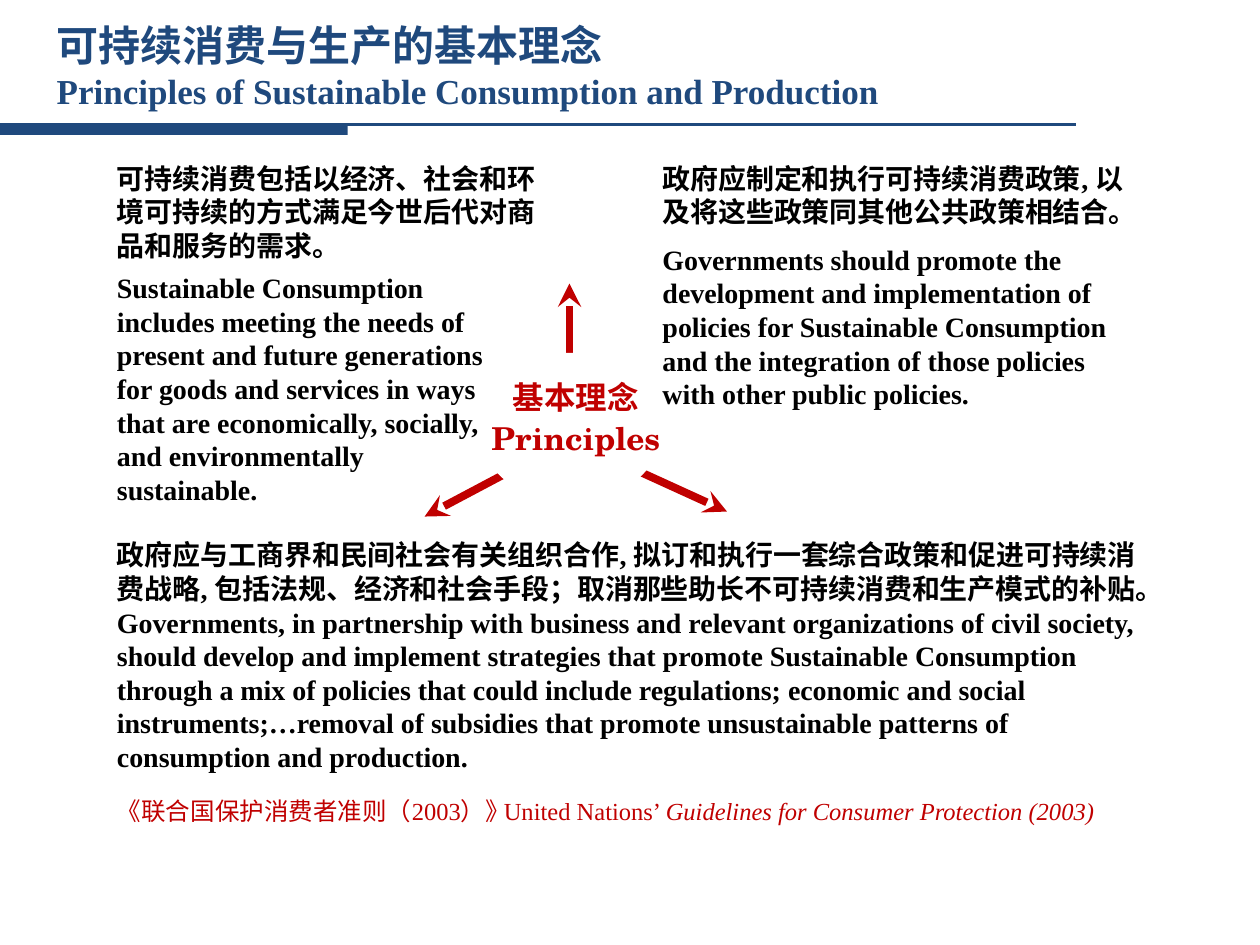
from dataclasses import dataclass

from lxml.etree import SubElement
from pptx import Presentation
from pptx.dml.color import RGBColor
from pptx.enum.shapes import MSO_CONNECTOR, MSO_SHAPE
from pptx.enum.text import MSO_ANCHOR, MSO_AUTO_SIZE, PP_ALIGN
from pptx.oxml.ns import qn
from pptx.util import Inches, Pt


@dataclass(frozen=True)
class Theme:
    navy: RGBColor = RGBColor(0x1F, 0x49, 0x7D)
    red: RGBColor = RGBColor(0xC0, 0x00, 0x00)
    black: RGBColor = RGBColor(0x00, 0x00, 0x00)
    white: RGBColor = RGBColor(0xFF, 0xFF, 0xFF)
    serif: str = "Times New Roman"
    schola: str = "TeX Gyre Schola"
    chinese: str = "Noto Sans CJK SC"
    title: int = 24
    subtitle: int = 20
    hub: int = 18
    body: int = 16
    source: int = 14


THEME = Theme()
LEFT = 0.83
HUB = (4.52, 3.49)
ARROW_TIPS = [(4.52, 2.25), (3.37, 4.1), (5.77, 4.06)]

CONSUMPTION_ZH = "可持续消费包括以经济、社会和环境可持续的方式满足今世后代对商品和服务的需求。"
CONSUMPTION_EN = (
    "Sustainable Consumption includes meeting the needs of present and future "
    "generations for goods and services in ways that are economically, socially, "
    "and environmentally sustainable."
)
POLICY_ZH = "政府应制定和执行可持续消费政策, 以及将这些政策同其他公共政策相结合。"
POLICY_EN = (
    "Governments should promote the development and implementation of policies "
    "for Sustainable Consumption and the integration of those policies with other "
    "public policies."
)
PARTNERSHIP_ZH = (
    "政府应与工商界和民间社会有关组织合作, 拟订和执行一套综合政策和促进可持续消费战略, "
    "包括法规、经济和社会手段；取消那些助长不可持续消费和生产模式的补贴。"
)
PARTNERSHIP_EN = (
    "Governments, in partnership with business and relevant organizations of civil "
    "society, should develop and implement strategies that promote Sustainable "
    "Consumption through a mix of policies that could include regulations; economic "
    "and social instruments;…removal of subsidies that promote unsustainable "
    "patterns of consumption and production."
)


def add_run(paragraph, text, size=THEME.body, color=THEME.black, font=THEME.serif,
            bold=True, italic=False):
    run = paragraph.add_run()
    run.text = text
    run.font.name = font
    run.font.size = Pt(size)
    run.font.color.rgb = color
    run.font.bold = bold
    run.font.italic = italic
    east_asian = SubElement(run.font._element, qn("a:ea"))
    east_asian.set("typeface", THEME.chinese)


def add_text_box(slide, box, lines, align=PP_ALIGN.LEFT, gap=0, **style):
    """Add a wrapped text box with one paragraph per line, gap points apart."""
    frame = slide.shapes.add_textbox(*map(Inches, box)).text_frame
    frame.word_wrap = True
    for index, line in enumerate(lines):
        paragraph = frame.paragraphs[0] if index == 0 else frame.add_paragraph()
        paragraph.alignment = align
        if index and gap:
            paragraph.space_before = Pt(gap)
        add_run(paragraph, line, **style)
    return frame


def add_line(slide, start, end, color, width, arrow=False):
    line = slide.shapes.add_connector(
        MSO_CONNECTOR.STRAIGHT, *map(Inches, (*start, *end)))
    line.line.color.rgb = color
    line.line.width = Pt(width)
    if arrow:
        SubElement(line.line._get_or_add_ln(), qn("a:tailEnd")).set("type", "stealth")
    SubElement(line._element.spPr, qn("a:effectLst"))


def add_solid(slide, kind, box, color):
    solid = slide.shapes.add_shape(kind, *map(Inches, box))
    solid.shadow.inherit = False
    solid.fill.solid()
    solid.fill.fore_color.rgb = color
    solid.line.fill.background()


def add_title(slide):
    title = slide.shapes.title
    title.left, title.top, title.width, title.height = map(
        Inches, (0.35, 0.21, 8.58, 0.62))
    frame = title.text_frame
    frame.auto_size = MSO_AUTO_SIZE.NONE
    frame.vertical_anchor = MSO_ANCHOR.MIDDLE
    chinese, english = frame.paragraphs[0], frame.add_paragraph()
    chinese.alignment = english.alignment = PP_ALIGN.LEFT
    add_run(chinese, "可持续消费与生产的基本理念", size=THEME.title,
            color=THEME.navy, font=THEME.chinese)
    add_run(english, "Principles of Sustainable Consumption and Production",
            size=THEME.subtitle, color=THEME.navy)


def add_header_rule(slide):
    add_line(slide, (0, 0.99), (8.54, 0.99), THEME.navy, 1.5)
    add_solid(slide, MSO_SHAPE.RECTANGLE, (0, 0.99, 2.76, 0.08), THEME.navy)


def add_hub(slide):
    """Arrows run from the hub, whose white disc hides their inner ends."""
    for tip in ARROW_TIPS:
        add_line(slide, HUB, tip, THEME.red, 4.5, arrow=True)
    add_solid(slide, MSO_SHAPE.OVAL, (3.8, 2.8, 1.46, 1.19), THEME.white)
    add_text_box(slide, (3.43, 2.95, 2.28, 0.73), ["基本理念", "Principles"],
                 align=PP_ALIGN.CENTER, gap=2, size=THEME.hub,
                 color=THEME.red, font=THEME.schola)


def add_source(slide):
    style = dict(size=THEME.source, color=THEME.red, bold=False)
    add_text_box(slide, (LEFT, 6.27, 3.34, 0.57),
                 ["《联合国保护消费者准则（2003）》"], **style)
    english = add_text_box(slide, (3.9, 6.27, 6.38, 0.34),
                           ["United Nations’ "], **style)
    add_run(english.paragraphs[0], "Guidelines for Consumer Protection (2003)",
            italic=True, **style)


def main():
    prs = Presentation()
    prs.slide_width, prs.slide_height = Inches(10), Inches(7.5)
    slide = prs.slides.add_slide(prs.slide_layouts[5])

    add_header_rule(slide)
    add_title(slide)
    add_text_box(slide, (LEFT, 1.23, 3.54, 0.91), [CONSUMPTION_ZH], font=THEME.chinese)
    add_text_box(slide, (5.16, 1.23, 3.93, 2.12), [POLICY_ZH, POLICY_EN], gap=8)
    add_text_box(slide, (LEFT, 2.1, 3.23, 1.99), [CONSUMPTION_EN])
    add_hub(slide)
    add_text_box(slide, (LEFT, 4.22, 8.43, 1.99), [PARTNERSHIP_ZH, PARTNERSHIP_EN])
    add_source(slide)

    prs.save("out.pptx")


if __name__ == "__main__":
    main()
